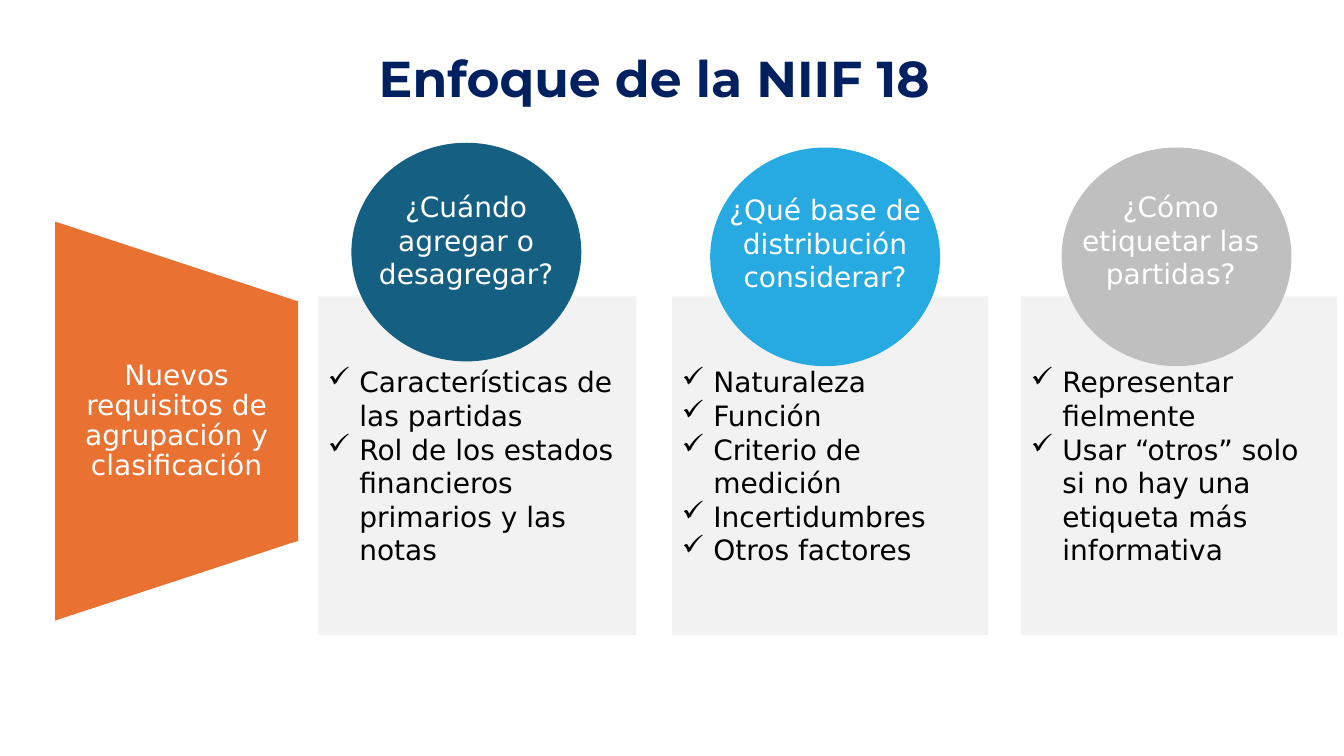
import pptx
import pptx.util
import pptx.dml.color
import pptx.enum.shapes
import pptx.enum.text
import pptx.oxml.ns
from lxml import etree

Pt = pptx.util.Pt
RGBColor = pptx.dml.color.RGBColor
MSO_SHAPE = pptx.enum.shapes.MSO_SHAPE
PP_ALIGN = pptx.enum.text.PP_ALIGN
MSO_ANCHOR = pptx.enum.text.MSO_ANCHOR

WHITE = RGBColor(0xFF, 0xFF, 0xFF)
BLACK = RGBColor(0, 0, 0)
NAVY = RGBColor(0x00, 0x20, 0x60)
ORANGE = RGBColor(0xE9, 0x71, 0x32)
TEAL = RGBColor(0x15, 0x60, 0x82)
SKY = RGBColor(0x27, 0xAA, 0xE2)
GRAY = RGBColor(0xBF, 0xBF, 0xBF)
PANEL = RGBColor(0xF2, 0xF2, 0xF2)

INDENT = 22.5
PANEL_TOP, PANEL_HEIGHT = 211.7, 241.9
CIRCLE_WIDTH, CIRCLE_HEIGHT = 164.2, 156.2
LABEL_WIDTH, LABEL_HEIGHT = 173.5, 79.9

# panel left and width, circle left and top, label left and top
COLUMNS = [
    (227.1, 227.5, 251, 102, 246.2, 131.8, TEAL, "¿Cuándo agregar o desagregar?",
     ["Características de las partidas",
      "Rol de los estados financieros primarios y las notas"]),
    (480, 225.9, 507.3, 105.4, 502.6, 133.9, SKY, "¿Qué base de distribución considerar?",
     ["Naturaleza", "Función", "Criterio de medición", "Incertidumbres", "Otros factores"]),
    (729.3, 225.9, 758.3, 105.4, 749.5, 131.8, GRAY, "¿Cómo etiquetar las partidas?",
     ["Representar fielmente",
      "Usar “otros” solo si no hay una etiqueta más informativa"]),
]


def add_filled(shapes, kind, left, top, width, height, color):
    s = shapes.add_shape(kind, Pt(left), Pt(top), Pt(width), Pt(height))
    s.shadow.inherit = False
    s.fill.solid()
    s.fill.fore_color.rgb = color
    s.line.fill.background()
    return s


def write(s, lines, color, align=PP_ALIGN.CENTER, anchor=MSO_ANCHOR.MIDDLE,
          size=20, font="DejaVu Sans", bullet=None):
    """Fill a shape with one formatted paragraph per line."""
    tf = s.text_frame
    tf.word_wrap = True
    tf.vertical_anchor = anchor
    tf.text = "\n".join(lines)
    for p in tf.paragraphs:
        p.alignment = align
        if bullet:
            pPr = p._p.get_or_add_pPr()
            pPr.set("marL", str(Pt(INDENT)))
            pPr.set("indent", str(-Pt(INDENT)))
            etree.SubElement(pPr, pptx.oxml.ns.qn("a:buChar"), char=bullet)
        for r in p.runs:
            r.font.name = font
            r.font.size = Pt(size)
            r.font.color.rgb = color
    return tf


prs = pptx.Presentation()
prs.slide_width, prs.slide_height = Pt(960), Pt(540)
slide = prs.slides.add_slide(prs.slide_layouts[6])
shapes = slide.shapes

# Panels with check lists
for left, width, _, _, _, _, _, _, items in COLUMNS:
    panel = add_filled(shapes, MSO_SHAPE.RECTANGLE, left, PANEL_TOP, width, PANEL_HEIGHT, PANEL)
    write(panel, items, BLACK, align=PP_ALIGN.LEFT, bullet="✓")

# Circles with questions
for _, _, left, top, label_left, label_top, color, question, _ in COLUMNS:
    add_filled(shapes, MSO_SHAPE.OVAL, left, top, CIRCLE_WIDTH, CIRCLE_HEIGHT, color)
    label = shapes.add_textbox(Pt(label_left), Pt(label_top), Pt(LABEL_WIDTH), Pt(LABEL_HEIGHT))
    write(label, [question], WHITE, anchor=MSO_ANCHOR.TOP)

# Orange funnel on the left
funnel = shapes.add_group_shape()
trapezoid = add_filled(funnel.shapes, MSO_SHAPE.FLOWCHART_MANUAL_OPERATION,
                       -16.4, 214, 285, 173.5, ORANGE)
trapezoid.rotation = 270
block = add_filled(funnel.shapes, MSO_SHAPE.RECTANGLE, 39.4, 215.3, 173.5, 171.4, ORANGE)
tf = write(block, ["Nuevos requisitos de agrupación y clasificación"], WHITE)
tf.margin_left = tf.margin_right = Pt(10)
tf.margin_top = tf.margin_bottom = Pt(0)
tf.paragraphs[0].line_spacing = 0.9
tf.paragraphs[0].space_after = Pt(7)

# Title
title = shapes.add_textbox(Pt(25.2), Pt(5.8), Pt(884.2), Pt(104.4))
tf = write(title, ["Enfoque de la NIIF 18"], NAVY, size=36, font="Montserrat")
tf.paragraphs[0].line_spacing = 0.9
tf.paragraphs[0].runs[0].font.bold = True

prs.save("out.pptx")
